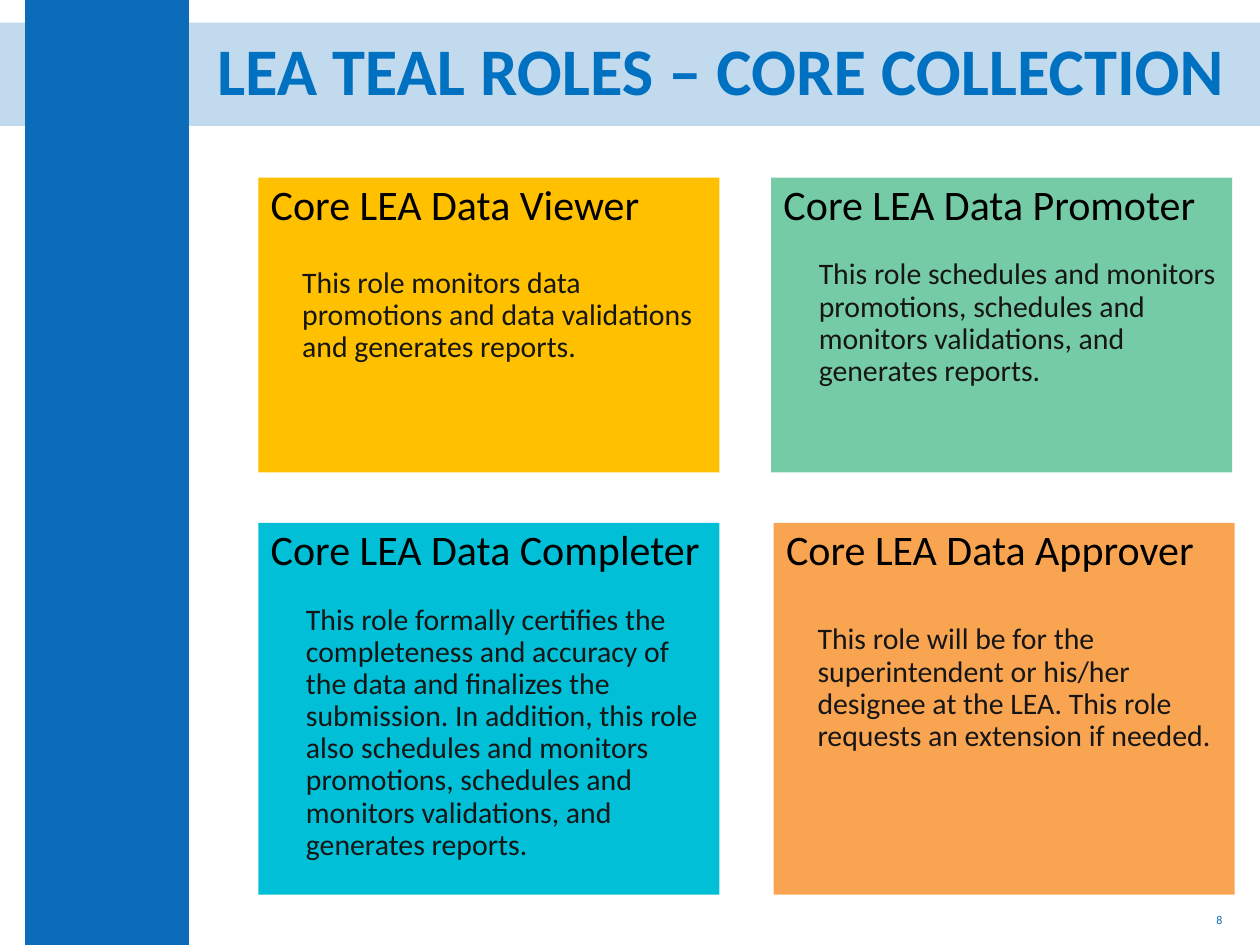
from lxml.etree import SubElement
from pptx import Presentation
from pptx.dml.color import RGBColor
from pptx.enum.shapes import MSO_SHAPE
from pptx.enum.text import MSO_ANCHOR, MSO_AUTO_SIZE, PP_ALIGN
from pptx.oxml.ns import qn
from pptx.util import Inches, Pt

FONT = "Calibri"
BLUE = RGBColor(0x0D, 0x6C, 0xB9)
TITLE_BLUE = RGBColor(0x00, 0x70, 0xC0)
YELLOW = RGBColor(0xFF, 0xC0, 0x00)
GREEN = RGBColor(0x75, 0xCB, 0xA6)
CYAN = RGBColor(0x00, 0xBF, 0xD7)
ORANGE = RGBColor(0xF9, 0xA4, 0x51)
BLACK = RGBColor(0x00, 0x00, 0x00)
DARK = RGBColor(0x16, 0x16, 0x16)

CARD_WIDTH = 3.66
TOP_ROW = (1.41, 2.34)  # top, height
BOTTOM_ROW = (4.15, 2.95)

# left, row, fill, role, description, indent (in), gap above description (pt)
CARDS = [
    (2.05, TOP_ROW, YELLOW, "Core LEA Data Viewer",
     "This role monitors data promotions and data validations and generates reports.",
     0.25, 22.2),
    (2.05, BOTTOM_ROW, CYAN, "Core LEA Data Completer",
     "This role formally certifies the completeness and accuracy of the data and "
     "finalizes the submission. In addition, this role also schedules and monitors "
     "promotions, schedules and monitors validations, and generates reports.",
     0.28, 17.2),
    (6.12, TOP_ROW, GREEN, "Core LEA Data Promoter",
     "This role schedules and monitors promotions, schedules and monitors "
     "validations, and generates reports.",
     0.28, 17.2),
    (6.14, BOTTOM_ROW, ORANGE, "Core LEA Data Approver",
     "This role will be for the superintendent or his/her designee at the LEA. "
     "This role requests an extension if needed.",
     0.25, 28.5),
]


def add_rect(slide, left, top, width, height, color, alpha=None):
    sp = slide.shapes.add_shape(MSO_SHAPE.RECTANGLE, Inches(left), Inches(top),
                                Inches(width), Inches(height))
    sp.shadow.inherit = False
    sp.fill.solid()
    sp.fill.fore_color.rgb = color
    sp.line.fill.background()
    if alpha is not None:
        clr = sp._element.spPr.find(qn("a:solidFill"))[0]
        SubElement(clr, qn("a:alpha"), val=str(alpha * 1000))
    return sp


def format_paragraph(p, size, color, align=PP_ALIGN.LEFT, bold=False):
    p.alignment = align
    for r in p.runs:
        r.font.name = FONT
        r.font.size = Pt(size)
        r.font.bold = bold
        r.font.color.rgb = color


def set_title(slide, text):
    title = slide.shapes.title
    title.left, title.top = Inches(1.44), Inches(0.27)
    title.width, title.height = Inches(8.56), Inches(0.63)
    tf = title.text_frame
    tf.text = text
    tf.word_wrap = True
    tf.auto_size = MSO_AUTO_SIZE.NONE
    tf.vertical_anchor = MSO_ANCHOR.MIDDLE
    p = tf.paragraphs[0]
    p.line_spacing = 0.9
    format_paragraph(p, 38, TITLE_BLUE, PP_ALIGN.CENTER, bold=True)
    # Bring the title in front of the band
    slide.shapes._spTree.append(title._element)


def add_card(slide, left, row, color, role, description, indent, gap):
    top, height = row
    tf = add_rect(slide, left, top, CARD_WIDTH, height, color).text_frame
    tf.word_wrap = True
    tf.vertical_anchor = MSO_ANCHOR.TOP

    p = tf.paragraphs[0]
    p.text = role
    p.line_spacing = 0.9
    format_paragraph(p, 24, BLACK)

    p = tf.add_paragraph()
    p.text = description
    p.line_spacing = 0.9
    p.space_before = Pt(gap)
    p._p.get_or_add_pPr().set("marL", str(Inches(indent)))
    format_paragraph(p, 17, DARK)


def add_page_number(slide, number):
    box = slide.shapes.add_textbox(Inches(7.55), Inches(7.1), Inches(2.25), Inches(0.4))
    tf = box.text_frame
    tf.text = number
    tf.word_wrap = True
    tf.vertical_anchor = MSO_ANCHOR.MIDDLE
    format_paragraph(tf.paragraphs[0], 6.8, BLUE, PP_ALIGN.RIGHT)


def main():
    prs = Presentation()
    prs.slide_width, prs.slide_height = Inches(10), Inches(7.5)
    slide = prs.slides.add_slide(prs.slide_layouts[5])

    # Title band and side bar
    add_rect(slide, 0, 0.18, 10, 0.82, BLUE, alpha=25)
    add_rect(slide, 0.2, 0, 1.3, 7.5, BLUE)
    set_title(slide, "LEA TEAL ROLES – CORE COLLECTION")

    # Role cards
    for card in CARDS:
        add_card(slide, *card)

    add_page_number(slide, "8")
    prs.save("out.pptx")


if __name__ == "__main__":
    main()
